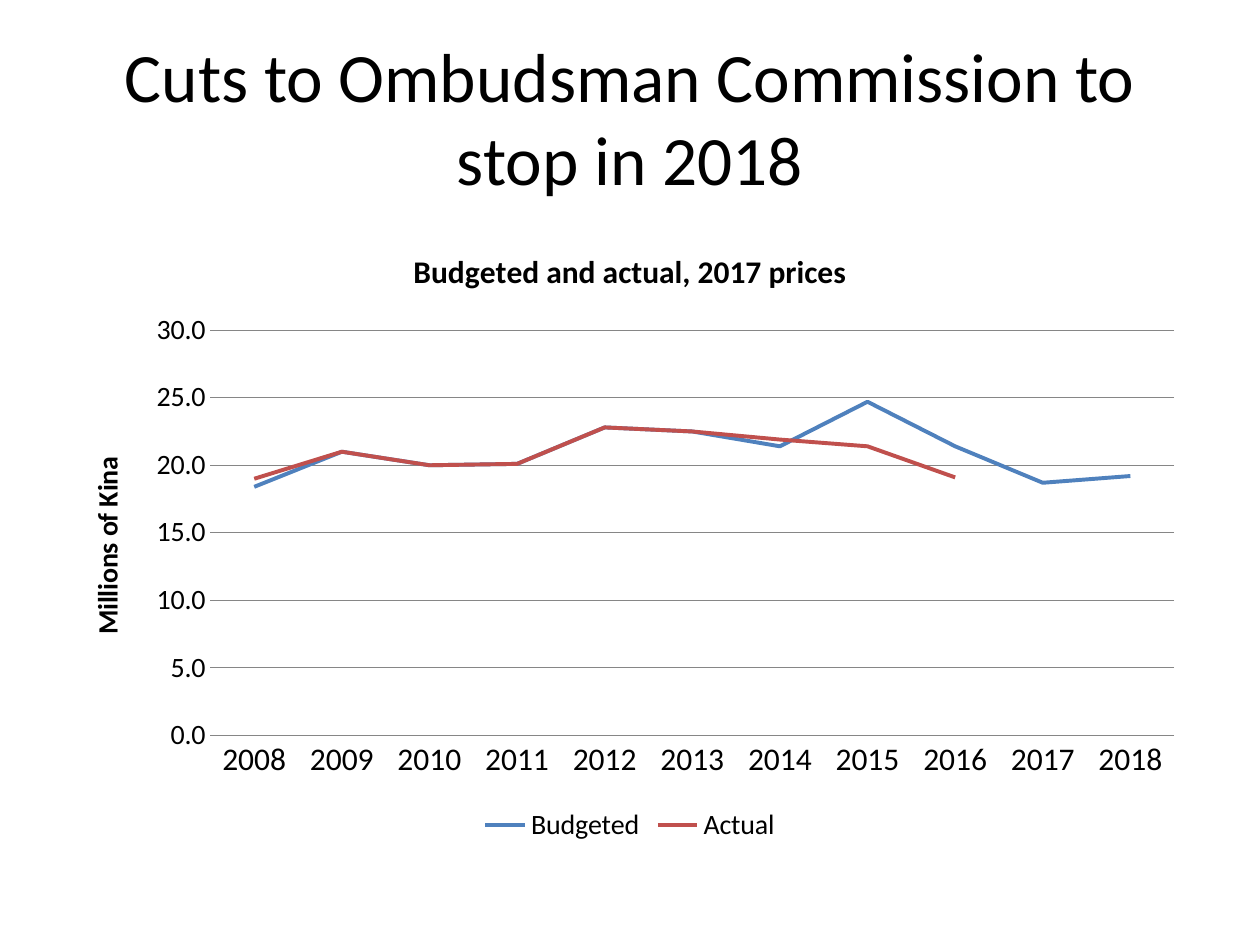
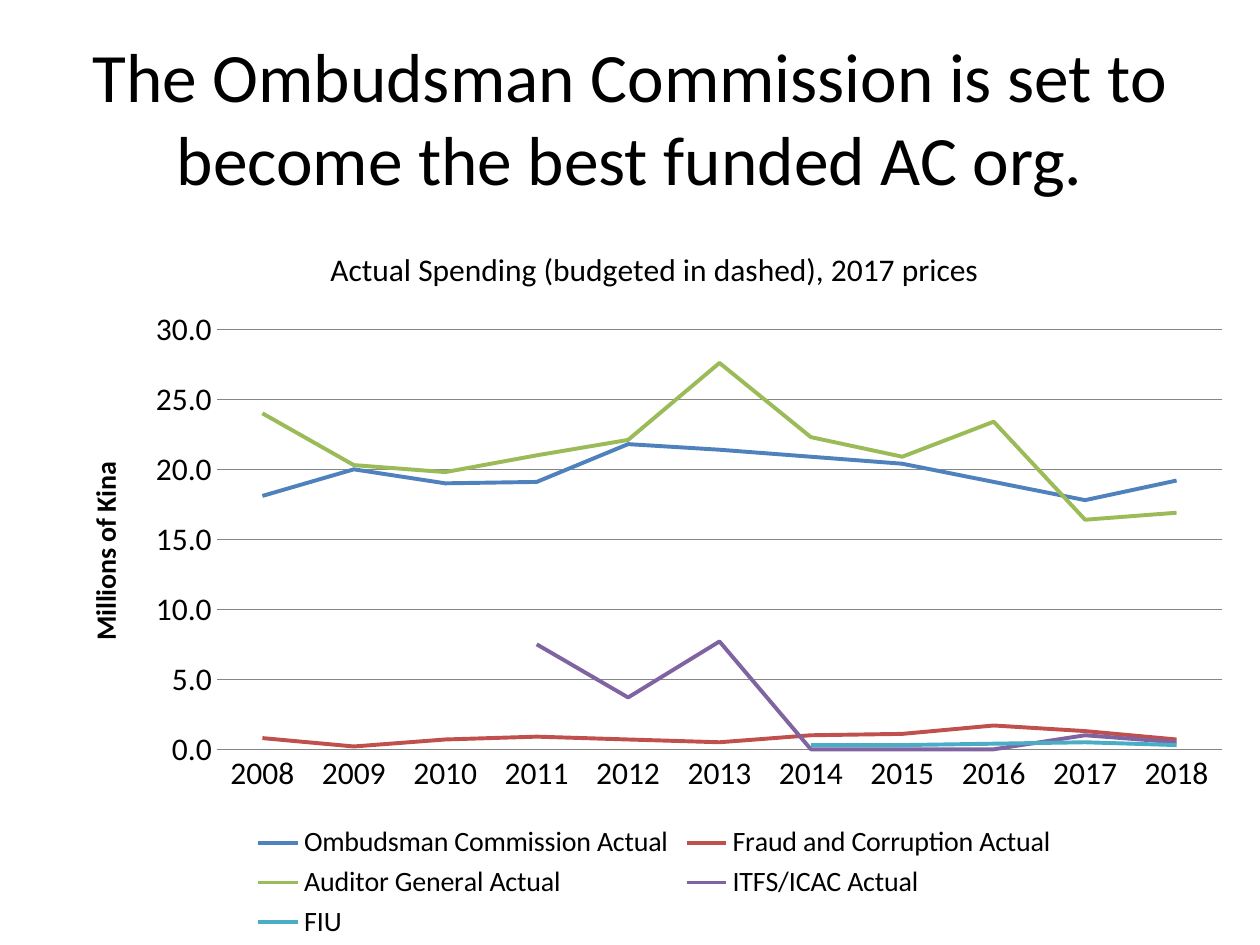
"""Build two slides of line charts on anti-corruption funding."""
import lxml.etree
import pptx
import pptx.chart.data
import pptx.dml.color
import pptx.enum.chart
import pptx.enum.text
import pptx.oxml.ns
import pptx.util
from pptx.util import Cm

FONT = "Calibri"
BLACK = "000000"
GRID = "868686"
SERIES_COLOURS = ["4F81BD", "C0504D", "9BBB59", "8064A2", "4BACC6"]
YEARS = [str(year) for year in range(2008, 2019)]

SLIDES = [
    {
        "title": "Cuts to Ombudsman Commission to stop in 2018",
        "chart_title": "Budgeted and actual, 2017 prices",
        "title_bold": True,
        "frame": (1.27, 4.52, 22.86, 12.57),
        "plot": {"x": 0.13, "y": 0.17, "w": 0.85, "h": 0.65},
        "value_size": 16,
        "series": {
            "Budgeted": [18.4, 21, 20, 20.1, 22.8, 22.5, 21.4, 24.7, 21.4, 18.7, 19.2],
            "Actual": [19, 21, 20, 20.1, 22.8, 22.5, 21.9, 21.4, 19.1, None, None],
        },
    },
    {
        "title": "The Ombudsman Commission is set to become the best funded AC org.",
        "chart_title": "Actual Spending (budgeted in dashed), 2017 prices",
        "title_bold": False,
        "frame": (1.27, 4.45, 23.85, 14.6),
        "plot": {"x": 0.13, "y": 0.15, "w": 0.85, "h": 0.58},
        "value_size": 18,
        "series": {
            "Ombudsman Commission Actual":
                [18.1, 20, 19, 19.1, 21.8, 21.4, 20.9, 20.4, 19.1, 17.8, 19.2],
            "Fraud and Corruption Actual":
                [0.8, 0.2, 0.7, 0.9, 0.7, 0.5, 1, 1.1, 1.7, 1.3, 0.7],
            "Auditor General Actual":
                [24, 20.3, 19.8, 21, 22.1, 27.6, 22.3, 20.9, 23.4, 16.4, 16.9],
            "ITFS/ICAC Actual":
                [None] * 3 + [7.5, 3.7, 7.7, 0, 0, 0, 1, 0.5],
            "FIU": [None] * 6 + [0.3, 0.3, 0.4, 0.5, 0.3],
        },
    },
]


def colour(hex_string):
    return pptx.dml.color.RGBColor.from_string(hex_string)


def add_run(paragraph, text, size, bold=False):
    run = paragraph.add_run()
    run.text = text
    run.font.name = FONT
    run.font.size = pptx.util.Pt(size)
    run.font.bold = bold
    run.font.color.rgb = colour(BLACK)


presentation = pptx.Presentation()
presentation.slide_width = Cm(25.4)
presentation.slide_height = Cm(19.05)

for content in SLIDES:
    slide = presentation.slides.add_slide(presentation.slide_layouts[6])

    title = slide.shapes.add_textbox(Cm(1.27), Cm(0.76), Cm(22.86), Cm(3.18))
    title.text_frame.word_wrap = True
    title.text_frame.vertical_anchor = pptx.enum.text.MSO_ANCHOR.MIDDLE
    paragraph = title.text_frame.paragraphs[0]
    paragraph.alignment = pptx.enum.text.PP_ALIGN.CENTER
    add_run(paragraph, content["title"], 39.6)

    data = pptx.chart.data.CategoryChartData(number_format="#,##0.0")
    data.categories = YEARS
    for name, values in content["series"].items():
        data.add_series(name, values)
    chart = slide.shapes.add_chart(
        pptx.enum.chart.XL_CHART_TYPE.LINE,
        *[Cm(length) for length in content["frame"]], data).chart
    chart.font.name = FONT
    chart.font.size = pptx.util.Pt(10)
    chart.font.color.rgb = colour(BLACK)
    chart.has_title = True
    add_run(chart.chart_title.text_frame.paragraphs[0],
            content["chart_title"], 18, content["title_bold"])
    chart.chart_title.include_in_layout = False

    chart.has_legend = True
    chart.legend.position = pptx.enum.chart.XL_LEGEND_POSITION.BOTTOM
    chart.legend.include_in_layout = False
    chart.legend.font.size = pptx.util.Pt(16)

    value_axis = chart.value_axis
    value_axis.minimum_scale, value_axis.maximum_scale = 0, 30
    value_axis.major_unit = 5
    value_axis.tick_labels.number_format = "#,##0.0"
    value_axis.tick_labels.number_format_is_linked = False
    value_axis.format.line.fill.background()
    value_axis.has_title = True
    add_run(value_axis.axis_title.text_frame.paragraphs[0],
            "Millions of Kina", 16, True)
    value_axis.has_major_gridlines = True
    for line in (value_axis.major_gridlines.format.line,
                 chart.category_axis.format.line):
        line.color.rgb = colour(GRID)
        line.width = pptx.util.Pt(0.75)
    for axis, size in ((value_axis, content["value_size"]),
                       (chart.category_axis, 18)):
        axis.major_tick_mark = pptx.enum.chart.XL_TICK_MARK.NONE
        axis.tick_labels.font.size = pptx.util.Pt(size)

    plot = chart.plots[0]
    plot.vary_by_categories = False
    for series, line_colour in zip(plot.series, SERIES_COLOURS):
        series.smooth = False
        series.marker.style = pptx.enum.chart.XL_MARKER_STYLE.NONE
        series.format.line.color.rgb = colour(line_colour)
        series.format.line.width = pptx.util.Pt(2.25)

    qualified = pptx.oxml.ns.qn
    plot_area = chart.element.find(".//" + qualified("c:plotArea"))
    for old_layout in plot_area.findall(qualified("c:layout")):
        plot_area.remove(old_layout)
    layout = lxml.etree.Element(qualified("c:layout"))
    plot_area.insert(0, layout)
    manual = lxml.etree.SubElement(layout, qualified("c:manualLayout"))
    settings = {"layoutTarget": "inner", "xMode": "edge", "yMode": "edge",
                **content["plot"]}
    for tag, value in settings.items():
        lxml.etree.SubElement(manual, qualified("c:" + tag), val=str(value))

presentation.save("out.pptx")
